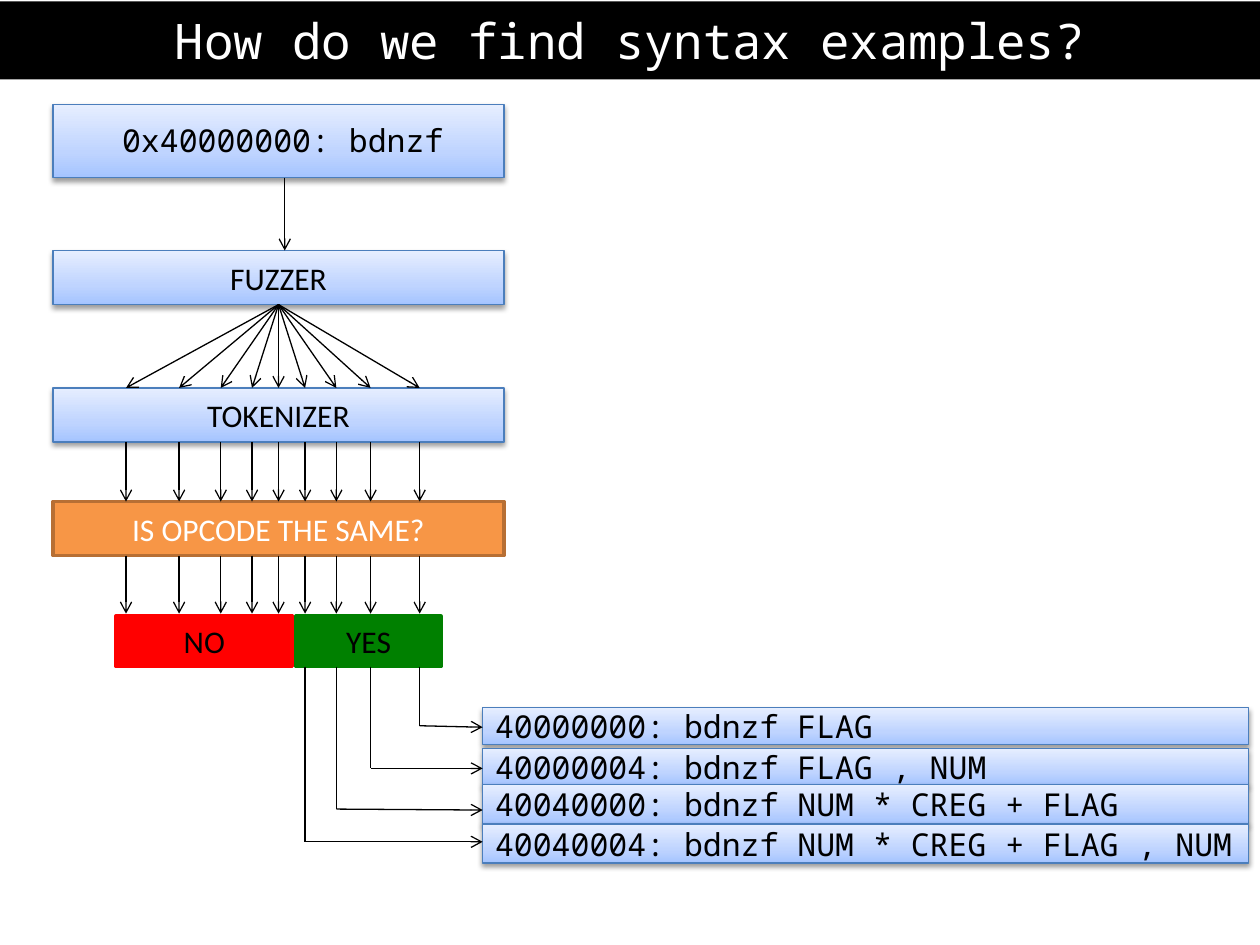
from copy import deepcopy

from lxml.etree import SubElement
from pptx import Presentation
from pptx.dml.color import RGBColor
from pptx.enum.shapes import MSO_CONNECTOR, MSO_SHAPE
from pptx.enum.text import MSO_ANCHOR, PP_ALIGN
from pptx.oxml.ns import qn
from pptx.util import Cm, Pt

BLACK = RGBColor(0x00, 0x00, 0x00)
WHITE = RGBColor(0xFF, 0xFF, 0xFF)
RED = RGBColor(0xFF, 0x00, 0x00)
GREEN = RGBColor(0x00, 0x80, 0x00)
ORANGE = RGBColor(0xF7, 0x96, 0x46)
BROWN = RGBColor(0xB7, 0x6F, 0x34)
BLUE_EDGE = RGBColor(0x4B, 0x7E, 0xBC)
BLUE_STOPS = [
    (0, RGBColor(0xA4, 0xC4, 0xFF)),
    (0.35, RGBColor(0xBF, 0xD4, 0xFF)),
    (1, RGBColor(0xE6, 0xEE, 0xFF)),
]

SANS = "Calibri"
MONO = "Noto Sans Mono"

# Lengths in centimetres
STAGE_LEFT, STAGE_WIDTH, STAGE_HEIGHT = 1.07, 9.09, 1.09
INPUT_TOP, INPUT_HEIGHT = 2.11, 1.47
FUZZER_TOP, TOKENIZER_TOP, CHECK_TOP = 5.05, 7.82, 10.11
ANSWER_TOP, ANSWER_HEIGHT = 12.42, 1.02
CENTRE = STAGE_LEFT + STAGE_WIDTH / 2
LANES = [2.54, 3.61, 4.45, 5.08, CENTRE, 6.15, 6.78, 7.47, 8.46]
RESULT_LEFT, RESULT_WIDTH = 9.73, 15.44

# Text, top, height, height where the lane turns, height of the arrow tip
RESULTS = [
    ("40000000: bdnzf FLAG", 14.27, 0.74, 14.63, 14.66),
    ("40000004: bdnzf FLAG , NUM", 15.09, 0.74, 15.49, 15.49),
    ("40040000: bdnzf NUM * CREG + FLAG", 15.82, 0.79, 16.31, 16.33),
    ("40040004: bdnzf NUM * CREG + FLAG , NUM", 16.61, 0.79, 16.97, 16.97),
]


def write_text(shape, text, font, size=18, color=BLACK, align=PP_ALIGN.CENTER):
    frame = shape.text_frame
    frame.word_wrap = True
    frame.vertical_anchor = MSO_ANCHOR.MIDDLE
    paragraph = frame.paragraphs[0]
    paragraph.text = text
    paragraph.alignment = align
    paragraph.font.name = font
    paragraph.font.size = Pt(size)
    paragraph.font.color.rgb = color


def add_box(page, left, top, width, height):
    box = page.shapes.add_shape(
        MSO_SHAPE.RECTANGLE, Cm(left), Cm(top), Cm(width), Cm(height))
    box.shadow.inherit = False
    return box


def add_flat_box(page, left, top, width, height, fill, edge):
    box = add_box(page, left, top, width, height)
    box.fill.solid()
    box.fill.fore_color.rgb = fill
    box.line.color.rgb = edge
    box.line.width = Pt(2)
    return box


def add_blue_box(page, left, top, width, height):
    box = add_box(page, left, top, width, height)
    box.line.color.rgb = BLUE_EDGE
    box.line.width = Pt(0.75)

    # Three-stop gradient, darkest at the bottom
    box.fill.gradient()
    box.fill.gradient_angle = 90
    properties = box._element.spPr
    stop_list = properties.find(".//" + qn("a:gsLst"))
    stop_list.append(deepcopy(stop_list[0]))
    for stop, (position, color) in zip(box.fill.gradient_stops, BLUE_STOPS):
        stop.position = position
        stop.color.rgb = color

    # Soft shadow below
    shadow = SubElement(
        properties.find(qn("a:effectLst")), qn("a:outerShdw"),
        blurRad=str(Pt(3.1)), dist=str(Pt(1.6)), dir="5400000", rotWithShape="0")
    shade = SubElement(shadow, qn("a:srgbClr"), val=str(BLACK))
    SubElement(shade, qn("a:alpha"), val="38000")
    return box


def add_line(page, start, end, arrow=True):
    line = page.shapes.add_connector(
        MSO_CONNECTOR.STRAIGHT, Cm(start[0]), Cm(start[1]), Cm(end[0]), Cm(end[1]))
    line.line.color.rgb = BLACK
    line.line.width = Pt(0.75)
    if arrow:
        SubElement(line.line._get_or_add_ln(), qn("a:tailEnd"), type="arrow")
    SubElement(line._element.spPr, qn("a:effectLst"))


def add_title(page):
    bar = add_box(page, 0, 0.03, 25.4, 1.57)
    bar.fill.solid()
    bar.fill.fore_color.rgb = BLACK
    bar.line.fill.background()
    write_text(bar, "How do we find syntax examples?", MONO, 28, WHITE)


def add_stages(page):
    add_blue_box(page, STAGE_LEFT, INPUT_TOP, STAGE_WIDTH, INPUT_HEIGHT)
    label = page.shapes.add_textbox(Cm(1.47), Cm(2.31), Cm(8.46), Cm(1.02))
    write_text(label, "0x40000000: bdnzf", MONO)

    for text, top in (("FUZZER", FUZZER_TOP), ("TOKENIZER", TOKENIZER_TOP)):
        stage = add_blue_box(page, STAGE_LEFT, top, STAGE_WIDTH, STAGE_HEIGHT)
        write_text(stage, text, SANS)

    check = add_flat_box(
        page, STAGE_LEFT, CHECK_TOP, STAGE_WIDTH, STAGE_HEIGHT, ORANGE, BROWN)
    write_text(check, "IS OPCODE THE SAME?", SANS, color=WHITE)

    for text, left, width, color in (("NO", 2.34, 3.56, RED), ("YES", 5.97, 2.92, GREEN)):
        answer = add_flat_box(page, left, ANSWER_TOP, width, ANSWER_HEIGHT, color, color)
        write_text(answer, text, SANS)


def add_flow(page):
    add_line(page, (5.74, INPUT_TOP + INPUT_HEIGHT), (5.74, FUZZER_TOP))
    for lane in LANES:
        add_line(page, (CENTRE, FUZZER_TOP + STAGE_HEIGHT), (lane, TOKENIZER_TOP))
        add_line(page, (lane, TOKENIZER_TOP + STAGE_HEIGHT), (lane, CHECK_TOP))
        add_line(page, (lane, CHECK_TOP + STAGE_HEIGHT), (lane, ANSWER_TOP - 0.05))


def add_results(page):
    # The rightmost lane leads to the topmost result
    for lane, (text, top, height, turn, tip) in zip(reversed(LANES), RESULTS):
        result = add_blue_box(page, RESULT_LEFT, top, RESULT_WIDTH, height)
        write_text(result, text, MONO, align=PP_ALIGN.LEFT)
        add_line(page, (lane, ANSWER_TOP + ANSWER_HEIGHT), (lane, turn), arrow=False)
        add_line(page, (lane, turn), (RESULT_LEFT, tip))


def main():
    deck = Presentation()
    deck.slide_width, deck.slide_height = Cm(25.4), Cm(19.05)
    page = deck.slides.add_slide(deck.slide_layouts[6])
    add_title(page)
    add_stages(page)
    add_flow(page)
    add_results(page)
    deck.save("out.pptx")


if __name__ == "__main__":
    main()
